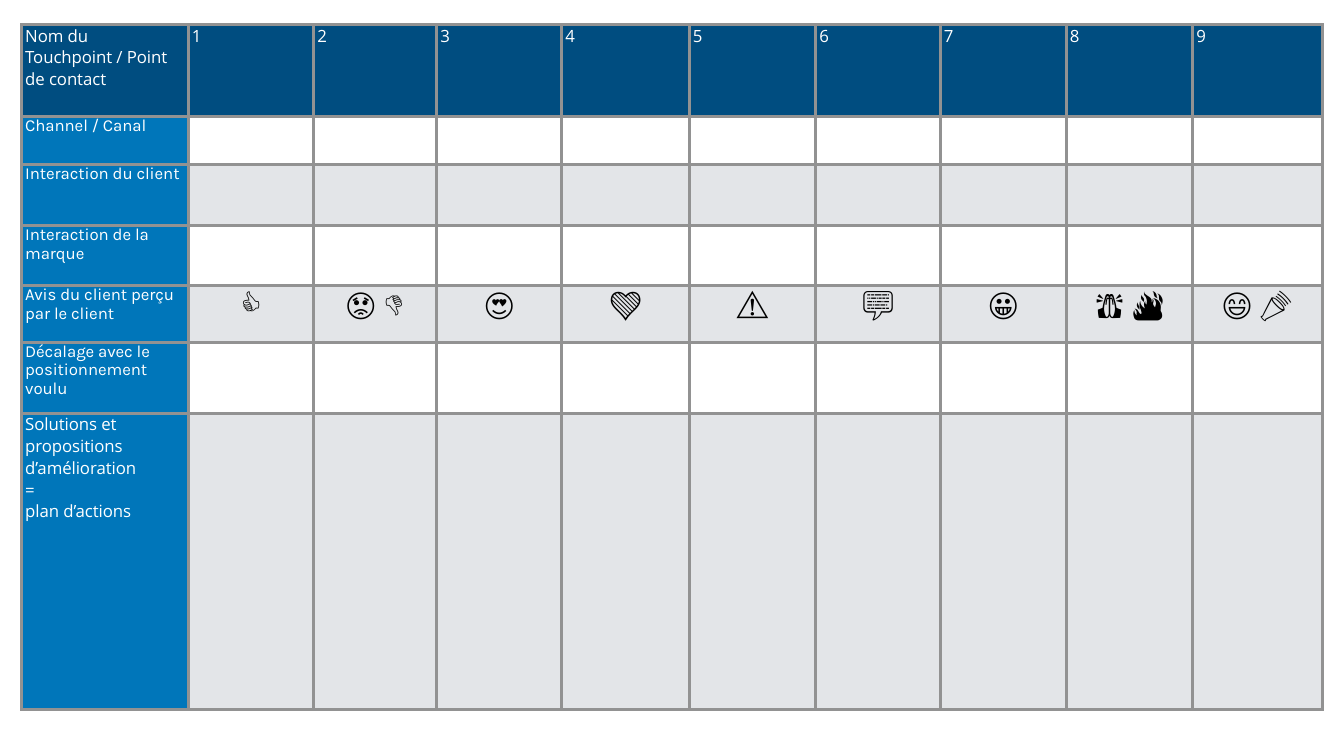
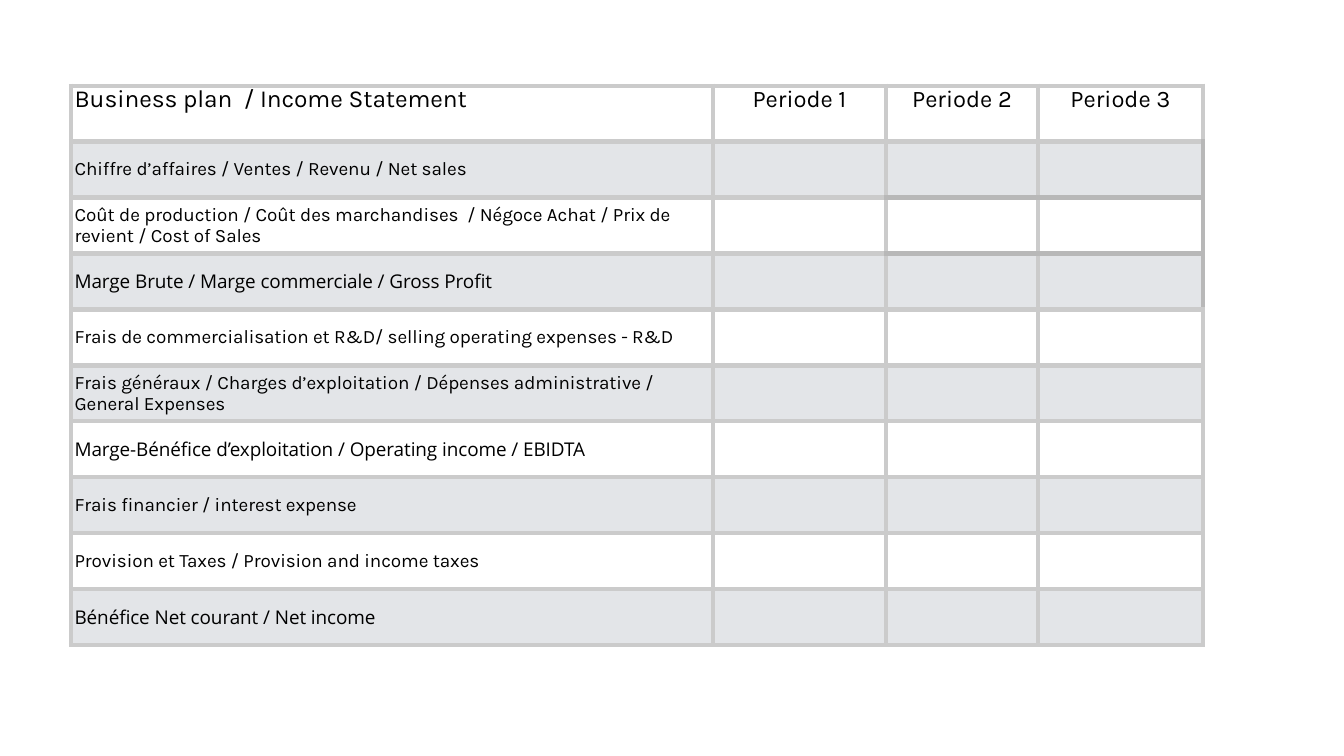
from lxml import etree
from pptx import Presentation
from pptx.dml.color import RGBColor as Rgb
from pptx.enum.text import MSO_ANCHOR as Anchor, PP_ALIGN as Align
from pptx.oxml.ns import qn
from pptx.util import Inches, Pt

COLORS = {
    "header": "004D80",
    "label": "0076BA",
    "band": "E3E5E8",
    "white": "FFFFFF",
    "black": "000000",
    "journey_line": "929292",
    "plan_line": "CBCBCB",
    "plan_accent": "B8B8B8",
}
SIDES = ("L", "R", "T", "B")
KARLA, OPEN_SANS = "Karla", "Open Sans"

# Customer journey
JOURNEY_COLUMNS = [3.31, 2.49, 2.44, 2.48, 2.53, 2.51, 2.47, 2.5, 2.51, 2.57]
JOURNEY_ROWS = [
    # label, label font, row height
    ("Nom du Touchpoint / Point de contact", OPEN_SANS, 1.82),
    ("Channel / Canal", KARLA, 0.96),
    ("Interaction du client", KARLA, 1.21),
    ("Interaction de la marque", KARLA, 1.19),
    ("Avis du client perçu par le client", KARLA, 1.12),
    ("Décalage avec le positionnement voulu", KARLA, 1.41),
    ("Solutions et propositions d’amélioration\n=\nplan d’actions", OPEN_SANS, 5.87),
]
OPINIONS = ["👍", "😡 👎", "😍", "💚", "⚠️", "💬", "😀", "🙏 🔥", "😄 📣"]
OPINION_ROW = 4

# Business plan
PLAN_COLUMNS = [12.74, 3.43, 3.02, 3.27]
PLAN_ROW_HEIGHT = 1.11
PLAN_TITLE = "Business plan  / Income Statement"
PLAN_LINES = [
    ("Chiffre d’affaires / Ventes / Revenu / Net sales", KARLA),
    ("Coût de production / Coût des marchandises  / Négoce Achat / "
     "Prix de revient / Cost of Sales", KARLA),
    ("Marge Brute / Marge commerciale / Gross Profit", OPEN_SANS),
    ("Frais de commercialisation et R&D/ selling operating expenses - R&D", KARLA),
    ("Frais généraux / Charges d’exploitation / Dépenses administrative / "
     "General Expenses", KARLA),
    ("Marge-Bénéfice d’exploitation / Operating income / EBIDTA", OPEN_SANS),
    ("Frais financier / interest expense", KARLA),
    ("Provision et Taxes / Provision and income taxes", KARLA),
    ("Bénéfice Net courant / Net income", OPEN_SANS),
]


def write(cell, text, font=KARLA, size=24, color="white", align=Align.LEFT,
          anchor=Anchor.TOP, line=None, tracking=0):
    """Put formatted text in a cell; a newline becomes a line break."""
    cell.vertical_anchor = anchor
    para = cell.text_frame.paragraphs[0]
    para.alignment = align
    if line:
        para.line_spacing = line
    for index, part in enumerate(text.split("\n")):
        if index:
            para.add_line_break()
        span = para.add_run()
        span.text = part
        span.font.name = font
        span.font.size = Pt(size)
        span.font.color.rgb = Rgb.from_string(COLORS[color])
        if tracking:
            span.font._element.set("spc", str(tracking))


def write_label(cell, text, **style):
    write(cell, text, line=0.95, tracking=-10, **style)


def style_cell(cell, fill, lines, width):
    """Set margins, the four borders (side -> colour name) and the fill."""
    cell.margin_left = cell.margin_right = Inches(0.07)
    cell.margin_top = cell.margin_bottom = 0
    properties = cell._tc.get_or_add_tcPr()
    for side in SIDES:
        border = etree.SubElement(properties, qn(f"a:ln{side}"), w=str(Pt(width)))
        solid = etree.SubElement(border, qn("a:solidFill"))
        etree.SubElement(solid, qn("a:srgbClr"), val=COLORS[lines[side]])
    cell.fill.solid()
    cell.fill.fore_color.rgb = Rgb.from_string(COLORS[fill])


def add_grid(page, left, top, widths, heights, fill_of, lines_of, line_width):
    """Add a table whose fills and borders follow from row and column."""
    frame = page.shapes.add_table(
        len(heights), len(widths), Inches(left), Inches(top),
        Inches(sum(widths)), Inches(sum(heights)))
    grid = frame.table
    grid.first_row = grid.horz_banding = False
    for column, width in zip(grid.columns, widths):
        column.width = Inches(width)
    for row, height in zip(grid.rows, heights):
        row.height = Inches(height)
    for row in range(len(heights)):
        for column in range(len(widths)):
            style_cell(grid.cell(row, column), fill_of(row, column),
                       lines_of(row, column), line_width)
    return grid


def journey_fill(row, column):
    if row == 0:
        return "header"
    if column == 0:
        return "label"
    return "white" if row % 2 else "band"


def journey_lines(row, column):
    return dict.fromkeys(SIDES, "journey_line")


def plan_fill(row, column):
    return "band" if row % 2 else "white"


def plan_lines(row, column):
    """Darker lines around the cost row and at the right of rows 1 to 3."""
    lines = dict.fromkeys(SIDES, "plan_line")
    if column >= 2:
        if row in (1, 2):
            lines["B"] = "plan_accent"
        if row in (2, 3):
            lines["T"] = "plan_accent"
        if column == 3 and row in (1, 2, 3):
            lines["R"] = "plan_accent"
    return lines


def add_journey(page, left, top):
    heights = [height for _, _, height in JOURNEY_ROWS]
    grid = add_grid(page, left, top, JOURNEY_COLUMNS, heights,
                    journey_fill, journey_lines, 5)
    # Row labels
    for row, (label, font, _) in enumerate(JOURNEY_ROWS):
        write_label(grid.cell(row, 0), label, font=font)
    # Touchpoint numbers and opinions
    for number, opinion in enumerate(OPINIONS, 1):
        write_label(grid.cell(0, number), str(number), font=OPEN_SANS)
        write(grid.cell(OPINION_ROW, number), opinion, size=46, color="black",
              align=Align.CENTER)


def add_plan(page, left, top):
    heights = [PLAN_ROW_HEIGHT] * (len(PLAN_LINES) + 1)
    grid = add_grid(page, left, top, PLAN_COLUMNS, heights,
                    plan_fill, plan_lines, 7)
    # Header row
    write_label(grid.cell(0, 0), PLAN_TITLE, size=35, color="black")
    for period in range(1, len(PLAN_COLUMNS)):
        write(grid.cell(0, period), f"Periode {period}", size=34, color="black",
              align=Align.CENTER)
    # Statement lines
    for row, (label, font) in enumerate(PLAN_LINES, 1):
        write_label(grid.cell(row, 0), label, font=font, size=27, color="black",
                    anchor=Anchor.MIDDLE)


def main():
    deck = Presentation()
    deck.slide_width, deck.slide_height = Inches(26.67), Inches(15)
    blank = deck.slide_layouts[6]
    add_journey(deck.slides.add_slide(blank), 0.43, 0.49)
    add_plan(deck.slides.add_slide(blank), 1.41, 1.7)
    deck.save("out.pptx")


if __name__ == "__main__":
    main()
